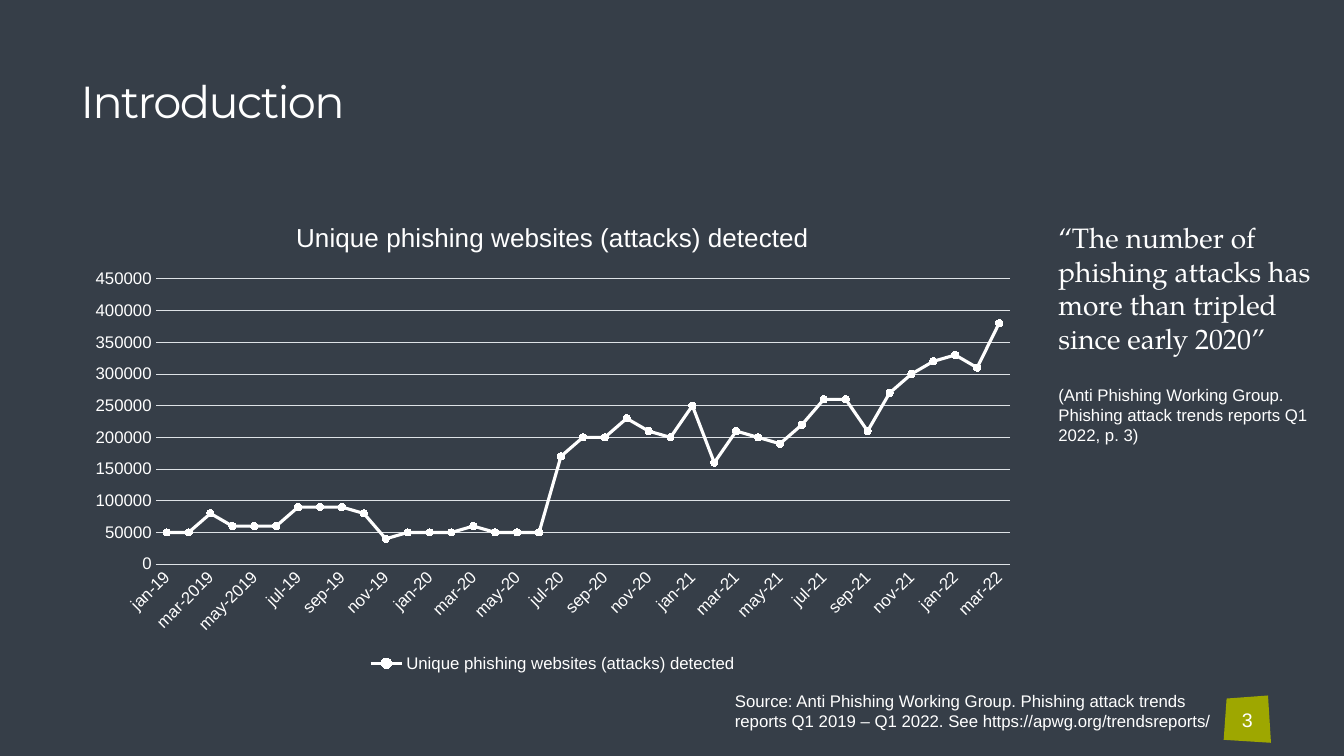
from dataclasses import dataclass

from lxml import etree
from pptx import Presentation
from pptx.chart.chart import Chart
from pptx.chart.data import CategoryChartData
from pptx.dml.color import RGBColor
from pptx.enum.chart import (XL_CHART_TYPE, XL_LEGEND_POSITION,
                             XL_MARKER_STYLE, XL_TICK_MARK)
from pptx.enum.text import MSO_ANCHOR, MSO_AUTO_SIZE, PP_ALIGN
from pptx.oxml.ns import qn
from pptx.slide import Slide
from pptx.util import Pt

LINE = XL_CHART_TYPE.LINE_MARKERS
BOTTOM = XL_LEGEND_POSITION.BOTTOM
CIRCLE = XL_MARKER_STYLE.CIRCLE
NO_TICK = XL_TICK_MARK.NONE
LOW, TOP = MSO_ANCHOR.BOTTOM, MSO_ANCHOR.TOP
GROW, FIXED = MSO_AUTO_SIZE.SHAPE_TO_FIT_TEXT, MSO_AUTO_SIZE.NONE
LEFT, CENTER = PP_ALIGN.LEFT, PP_ALIGN.CENTER

COLORS = {"back": "363E48", "text": "FFFFFF", "grid": "DEE2E6", "badge": "9EA700"}
SANS, HEAD, SERIF = "Arial", "Montserrat", "TeX Gyre Pagella"
NAME = "Unique phishing websites (attacks) detected"

MONTHS = "jan feb mar apr may jun jul aug sep okt nov dec".split()
LONG = {"mar-19": "mar-2019", "may-19": "may-2019"}
# Attacks per month from January 2019, in tens of thousands
COUNTS = [5, 5, 8, 6, 6, 6, 9, 9, 9, 8, 4, 5,
          5, 5, 6, 5, 5, 5, 17, 20, 20, 23, 21, 20,
          25, 16, 21, 20, 19, 22, 26, 26, 21, 27, 30, 32,
          33, 31, 38]
BADGE = [(905.8, 496.8), (876.2, 499), (874.1, 528.5), (907.9, 530.6)]


@dataclass
class Para:
    text: str
    size: float
    face: str = SANS
    before: float = 0


@dataclass
class Note:
    left: float
    top: float
    width: float
    height: float
    paras: list[Para]
    align: PP_ALIGN = LEFT
    anchor: MSO_ANCHOR = TOP


NOTES = [
    Note(874.1, 505.4, 33.8, 17.3, [Para("3", 14)], CENTER, LOW),
    Note(522, 493.2, 352.1, 28.8, [
        Para("Source: Anti Phishing Working Group. Phishing attack trends reports "
             "Q1 2019 – Q1 2022. See https://apwg.org/trendsreports/", 12)]),
    Note(753.1, 157.7, 189.4, 162.7, [
        Para("“The number of phishing attacks has more than tripled "
             "since early 2020”", 20, SERIF),
        Para("(Anti Phishing Working Group. Phishing attack trends reports "
             "Q1 2022, p. 3)", 12, before=21)]),
]


def color(key: str) -> RGBColor:
    return RGBColor.from_string(COLORS[key])


def style(font, size: float, face: str = SANS) -> None:
    font.size, font.name, font.bold = Pt(size), face, False
    font.color.rgb = color("text")


def frame(text, anchor: MSO_ANCHOR, fit: MSO_AUTO_SIZE) -> None:
    text.word_wrap, text.auto_size = True, fit
    text.vertical_anchor = anchor
    text.margin_left = text.margin_right = Pt(2.88)
    text.margin_top = text.margin_bottom = 0


def add_note(slide: Slide, note: Note) -> None:
    box = slide.shapes.add_textbox(Pt(note.left), Pt(note.top),
                                   Pt(note.width), Pt(note.height))
    text = box.text_frame
    frame(text, note.anchor, GROW)
    for i, item in enumerate(note.paras):
        para = text.add_paragraph() if i else text.paragraphs[0]
        para.text, para.alignment = item.text, note.align
        if item.before:
            para.space_before = Pt(item.before)
        style(para.font, item.size, item.face)


def add_badge(slide: Slide) -> None:
    points = [(Pt(x), Pt(y)) for x, y in BADGE]
    build = slide.shapes.build_freeform(*points[0], scale=1.0)
    build.add_line_segments(points[1:], close=True)
    shape = build.convert_to_shape()
    shape.shadow.inherit = False
    shape.fill.solid()
    shape.fill.fore_color.rgb = color("badge")
    shape.line.fill.background()


def set_title(slide: Slide) -> None:
    title = slide.shapes.title
    title.left, title.top = Pt(54.7), Pt(43.2)
    title.width, title.height = Pt(850.3), Pt(48.2)
    frame(title.text_frame, LOW, FIXED)
    para = title.text_frame.paragraphs[0]
    para.text, para.alignment, para.line_spacing = "Introduction", LEFT, 0.9
    style(para.font, 32, HEAD)
    para.runs[0]._r.get_or_add_rPr().set("spc", "-120")


def set_axes(chart: Chart) -> None:
    months, counts = chart.category_axis, chart.value_axis
    for axis in (months, counts):
        axis.major_tick_mark = axis.minor_tick_mark = NO_TICK
        style(axis.tick_labels.font, 12)
    counts.minimum_scale, counts.maximum_scale = 0, 450000
    counts.major_unit = 50000
    counts.has_major_gridlines = True
    counts.format.line.fill.background()
    for line in (months.format.line, counts.major_gridlines.format.line):
        line.color.rgb, line.width = color("grid"), Pt(0.75)
    root = months._element
    root.find(qn("c:txPr")).find(qn("a:bodyPr")).set("rot", "-2700000")
    skip = etree.Element(qn("c:tickLblSkip"), val="2")
    root.find(qn("c:noMultiLvlLbl")).addprevious(skip)


def add_trend(slide: Slide) -> None:
    data = CategoryChartData()
    labels = [f"{MONTHS[i % 12]}-{19 + i // 12}" for i in range(len(COUNTS))]
    data.categories = [LONG.get(label, label) for label in labels]
    data.add_series(NAME, [count * 10000 for count in COUNTS])
    chart = slide.shapes.add_chart(LINE, Pt(54.7), Pt(143.3), Pt(680.4),
                                   Pt(339.8), data).chart
    style(chart.font, 10)
    chart.has_title = True
    para = chart.chart_title.text_frame.paragraphs[0]
    para.text = NAME
    style(para.font, 18.6)
    chart.has_legend = True
    chart.legend.position, chart.legend.include_in_layout = BOTTOM, False
    style(chart.legend.font, 12)
    set_axes(chart)
    plot = chart.plots[0]
    plot.vary_by_categories = False
    trend = plot.series[0]
    trend.smooth = False
    trend.format.line.color.rgb, trend.format.line.width = color("text"), Pt(2.25)
    trend.marker.style, trend.marker.size = CIRCLE, 5
    look = trend.marker.format
    look.fill.solid()
    look.fill.fore_color.rgb = look.line.color.rgb = color("text")


def main() -> None:
    deck = Presentation()
    deck.slide_width, deck.slide_height = Pt(960), Pt(540)
    slide = deck.slides.add_slide(deck.slide_layouts[5])
    slide.background.fill.solid()
    slide.background.fill.fore_color.rgb = color("back")
    add_badge(slide)
    set_title(slide)
    add_trend(slide)
    for note in NOTES:
        add_note(slide, note)
    deck.save("out.pptx")


if __name__ == "__main__":
    main()
